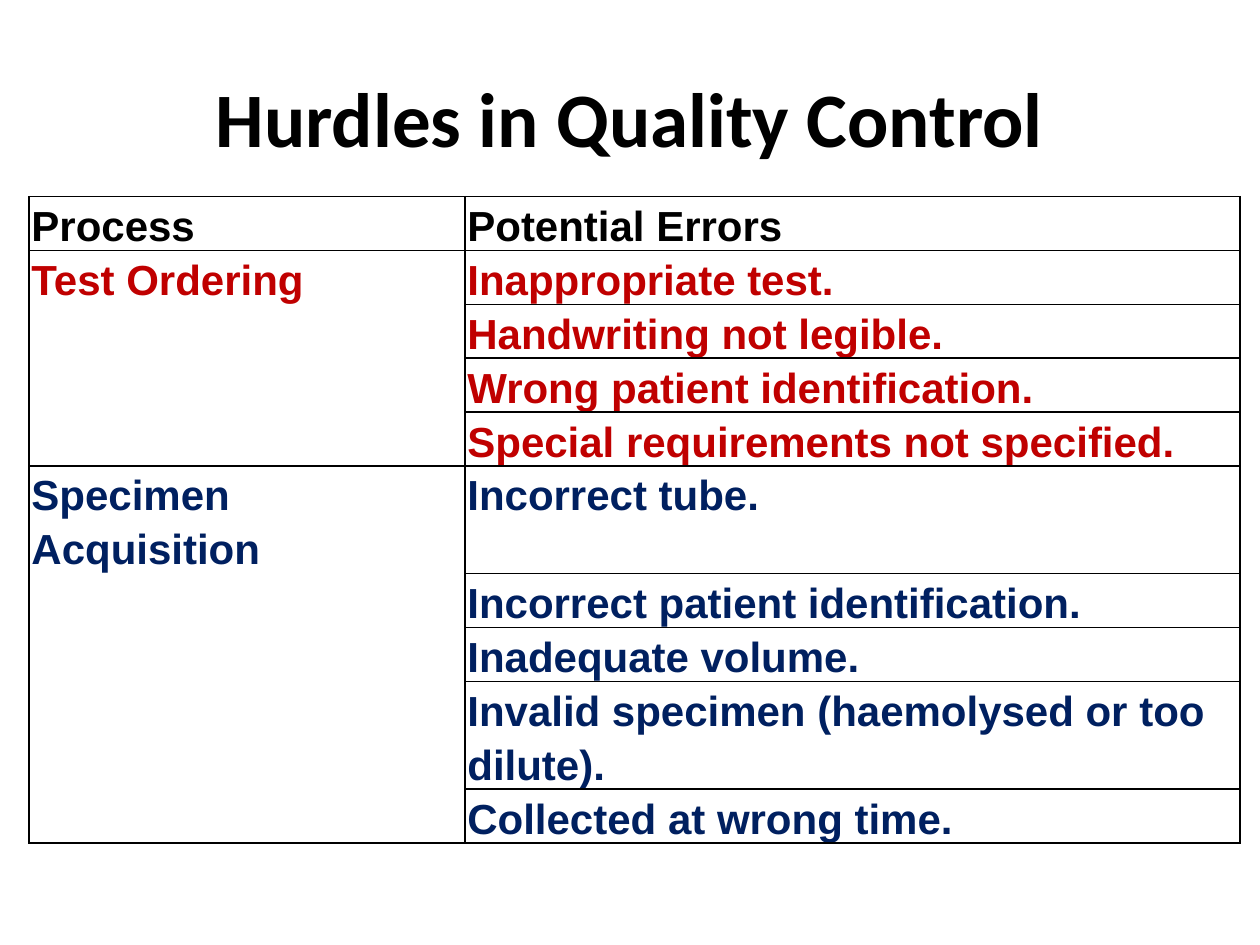
"""Build the quality control hurdles slide."""
from lxml import etree
from pptx import Presentation
from pptx.dml.color import RGBColor
from pptx.enum import text
from pptx.oxml import ns
from pptx.util import Inches, Pt

BLACK, RED, NAVY, WHITE = "000000", "C00000", "002060", "FFFFFF"
GROUPS = [
    ("Process", BLACK, ["Potential Errors"]),
    ("Test Ordering", RED, [
        "Inappropriate test.",
        "Handwriting not legible.",
        "Wrong patient identification.",
        "Special requirements not specified.",
    ]),
    ("Specimen Acquisition", NAVY, [
        "Incorrect tube.",
        "Incorrect patient identification.",
        "Inadequate volume.",
        "Invalid specimen (haemolysed or too dilute).",
        "Collected at wrong time.",
    ]),
]
TWO_LINE_ROWS = (5, 8)


def rgb(value):
    return RGBColor.from_string(value)


class Deck:
    def __init__(self, prs):
        self.s = prs.slides.add_slide(prs.slide_layouts[5])

    def font(self, p, name, size, color):
        p.font.name, p.font.size, p.font.bold = name, Pt(size), True
        p.font.color.rgb = rgb(color)

    def title(self, words, left, top, width, height):
        sp = self.s.shapes.title
        sp.left, sp.top = Inches(left), Inches(top)
        sp.width, sp.height = Inches(width), Inches(height)
        tf = sp.text_frame
        tf.text = words
        tf.vertical_anchor = text.MSO_ANCHOR.MIDDLE
        p = tf.paragraphs[0]
        p.alignment = text.PP_ALIGN.CENTER
        self.font(p, "Calibri", 44, BLACK)

    def borders(self, cell, sides):
        tcPr = cell._tc.get_or_add_tcPr()
        for side in "LRTB":
            ln = etree.SubElement(tcPr, ns.qn(f"a:ln{side}"), w=str(Pt(1)))
            if side in sides:
                fill = etree.SubElement(ln, ns.qn("a:solidFill"))
                etree.SubElement(fill, ns.qn("a:srgbClr"), val=BLACK)
            else:
                etree.SubElement(ln, ns.qn("a:noFill"))

    def cell(self, cell, words, color, sides="LRTB"):
        cell.margin_left = cell.margin_right = Inches(0.02)
        cell.margin_top = cell.margin_bottom = 0
        self.borders(cell, sides)
        cell.fill.solid()
        cell.fill.fore_color.rgb = rgb(WHITE)
        cell.text = words
        p = cell.text_frame.paragraphs[0]
        p.line_spacing, p.space_after = 1.15, Pt(10)
        self.font(p, "Arial", 24, color)

    def table(self, groups, left, top, widths, line):
        count = sum(len(errors) for _, _, errors in groups)
        heights = [line * (2 if i in TWO_LINE_ROWS else 1) for i in range(count)]
        table = self.s.shapes.add_table(
            count, len(widths), Inches(left), Inches(top),
            Inches(sum(widths)), Inches(sum(heights))).table
        for column, width in zip(table.columns, widths):
            column.width = Inches(width)
        for row, height in zip(table.rows, heights):
            row.height = Inches(height)
        row = 0
        for process, color, errors in groups:
            for i, error in enumerate(errors):
                first, last = i == 0, i == len(errors) - 1
                sides = "LR" + "T" * first + "B" * last
                self.cell(table.cell(row, 0), process if first else "", color, sides)
                self.cell(table.cell(row, 1), error, color)
                row += 1


def main():
    prs = Presentation()
    prs.slide_width, prs.slide_height = Inches(10), Inches(7.5)
    deck = Deck(prs)
    deck.title("Hurdles in Quality Control", 0.5, 0.3, 9, 1.25)
    deck.table(GROUPS, 0.23, 1.56, (3.46, 6.15), 0.42)
    prs.save("out.pptx")


if __name__ == "__main__":
    main()
